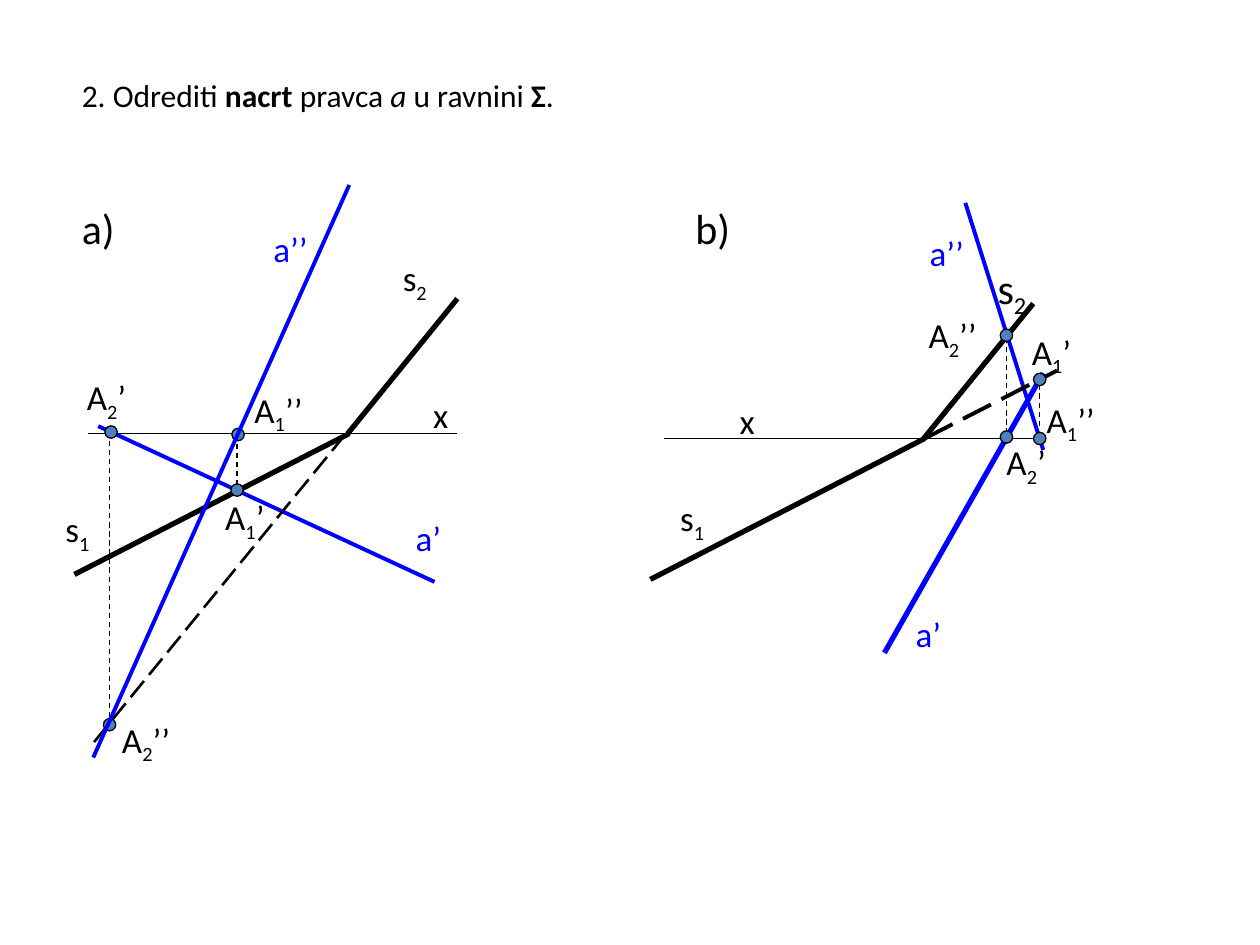
import pptx
import pptx.util
import pptx.dml.color
import pptx.enum.dml
import pptx.enum.shapes
import pptx.enum.text
import pptx.oxml.ns
import lxml.etree
from dataclasses import dataclass

Cm, Pt = pptx.util.Cm, pptx.util.Pt
Dash = pptx.enum.dml.MSO_LINE


@dataclass
class Theme:
    font: str = "Calibri"
    ink: str = "000000"
    blue: str = "0000FF"
    fill: str = "4F81BD"
    head: int = 18
    text: int = 20
    large: int = 24
    thin: float = 0.75
    mid: float = 1.5
    bold: float = 2.25
    thick: float = 3
    dot: float = 0.25


def rgb(code):
    return pptx.dml.color.RGBColor.from_string(code)


class Sheet:
    def __init__(self, slide, theme):
        self.slide, self.theme = slide, theme

    def line(self, start, end, width, color=None, dash=None):
        ends = [Cm(v) for v in (*start, *end)]
        line = self.slide.shapes.add_connector(
            pptx.enum.shapes.MSO_CONNECTOR.STRAIGHT, *ends)
        line.line.color.rgb = rgb(color or self.theme.ink)
        line.line.width = Pt(width)
        if dash:
            line.line.dash_style = dash
        lxml.etree.SubElement(line._element.spPr,
                              pptx.oxml.ns.qn("a:effectLst"))

    def dot(self, x, y):
        size = self.theme.dot
        dot = self.slide.shapes.add_shape(
            pptx.enum.shapes.MSO_SHAPE.OVAL,
            Cm(x - size / 2), Cm(y - size / 2), Cm(size), Cm(size))
        dot.shadow.inherit = False
        dot.fill.solid()
        dot.fill.fore_color.rgb = rgb(self.theme.fill)
        dot.line.color.rgb = rgb(self.theme.ink)
        dot.line.width = Pt(self.theme.thin)

    def text(self, left, top, width, parts, size=None, color=None):
        """Each part is a (text, mark) pair; marks: b, i, sub or empty."""
        size = size or self.theme.text
        box = self.slide.shapes.add_textbox(
            Cm(left), Cm(top), Cm(width), Cm(size * 0.055))
        frame = box.text_frame
        frame.word_wrap = True
        frame.auto_size = pptx.enum.text.MSO_AUTO_SIZE.SHAPE_TO_FIT_TEXT
        for text, mark in parts:
            run = frame.paragraphs[0].add_run()
            run.text = text
            run.font.name = self.theme.font
            run.font.size = Pt(size)
            run.font.color.rgb = rgb(color or self.theme.ink)
            run.font.bold = mark == "b"
            run.font.italic = mark == "i"
            if mark == "sub":
                run._r.get_or_add_rPr().set("baseline", "-25000")

    def label(self, left, top, width, name, size=None, color=None):
        """Set digits in the name as subscripts."""
        parts = [(c, "sub" if c.isdigit() else "") for c in name]
        self.text(left, top, width, parts, size, color)


def main():
    deck = pptx.Presentation()
    deck.slide_width, deck.slide_height = Cm(25.4), Cm(19.05)
    theme = Theme()
    sheet = Sheet(deck.slides.add_slide(deck.slide_layouts[6]), theme)
    ink, blue = theme.ink, theme.blue
    thin, mid, bold, thick = theme.thin, theme.mid, theme.bold, theme.thick

    # Task
    sheet.text(1.4, 1.4, 10.46, [
        ("2. Odrediti ", ""), ("nacrt", "b"), (" pravca ", ""), ("a", "i"),
        (" u ravnini ", ""), ("Σ", "b"), (".", "")], theme.head)

    # Figure a: axis, traces, projectors and plan
    lines = [
        ((2.21, 8.71), (2.21, 14.63), thin, ink, Dash.DASH),
        ((1.78, 8.74), (9.22, 8.74), thin),
        ((9.22, 6.02), (7.01, 8.74), thick),
        ((7.04, 8.74), (1.5, 11.58), thick),
        ((1.98, 8.59), (8.76, 11.73), bold, blue),
        ((4.78, 9.78), (4.78, 8.66), thin, ink, Dash.DASH),
        ((6.96, 8.76), (1.83, 15.04), mid, ink, Dash.LONG_DASH),
    ]
    # Figure b: axis, traces, line and projectors
    lines += [
        ((20.83, 6.12), (18.62, 8.84), thick),
        ((13.39, 8.84), (20.83, 8.84), thin),
        ((21.03, 7.52), (17.83, 13.16), thick, blue),
        ((18.64, 8.84), (13.11, 11.68), thick),
        ((19.46, 4.09), (21.03, 9.07), bold, blue),
        ((20.29, 8.74), (20.29, 6.83), thin, ink, Dash.DASH),
        ((20.96, 7.75), (20.96, 8.66), thin, ink, Dash.DASH),
        ((18.64, 8.84), (21.31, 7.47), bold, ink, Dash.LONG_DASH),
    ]
    for item in lines:
        sheet.line(*item)

    # Trace points
    for spot in [(4.78, 9.88), (4.8, 8.76), (2.24, 8.71), (2.21, 14.61),
                 (20.29, 6.76), (20.96, 8.84), (20.29, 8.81), (20.96, 7.65)]:
        sheet.dot(*spot)

    # Elevation of figure a, over its points
    sheet.line((1.88, 15.27), (7.04, 3.73), bold, blue)

    # Labels of figure a
    labels = [
        (1.4, 3.96, 1.55, "a)", theme.large),
        (1.07, 10.11, 1.65, "s1"),
        (7.87, 5.05, 1.3, "s2"),
        (8.48, 7.8, 0.79, "x"),
        (4.29, 9.86, 1.68, "A1’"),
        (4.88, 7.7, 2.13, "A1’’"),
        (1.5, 7.44, 1.7, "A2’"),
        (2.21, 14.35, 1.83, "A2’’"),
        (8.13, 10.29, 1.52, "a’", theme.text, blue),
        (5.26, 4.47, 2.29, "a’’", theme.text, blue),
    ]
    # Labels of figure b
    labels += [
        (13.77, 3.96, 1.45, "b)", theme.large),
        (13.46, 9.88, 1.65, "s1"),
        (19.86, 5.16, 1.78, "s2", theme.large),
        (14.66, 7.92, 1.02, "x"),
        (20.55, 6.53, 1.52, "A1’"),
        (20.85, 7.9, 1.83, "A1’’"),
        (20.04, 8.76, 1.9, "A2’"),
        (18.47, 6.2, 2.06, "A2’’"),
        (18.21, 12.22, 1.55, "a’", theme.text, blue),
        (18.49, 4.55, 1.78, "a’’", theme.text, blue),
    ]
    for item in labels:
        sheet.label(*item)

    deck.save("out.pptx")


if __name__ == "__main__":
    main()
